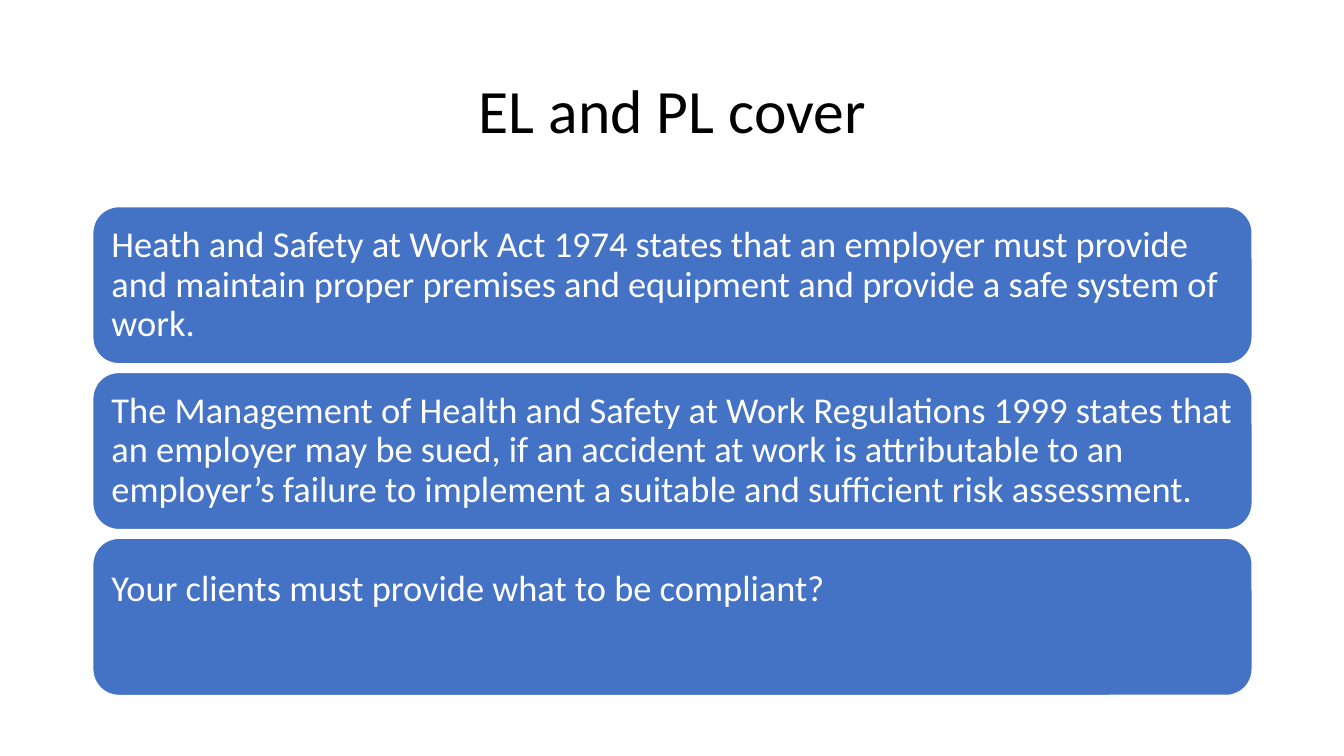
from dataclasses import dataclass

from pptx import Presentation
from pptx.dml.color import RGBColor as RGB
from pptx.enum.shapes import MSO_SHAPE as SHAPE
from pptx.enum.text import MSO_ANCHOR as ANCHOR, PP_ALIGN as ALIGN
from pptx.util import Inches, Pt


@dataclass(frozen=True)
class Theme:
    font: str = "Calibri"
    ink: RGB = RGB(0, 0, 0)
    paper: RGB = RGB(255, 255, 255)
    card: RGB = RGB(0x44, 0x72, 0xC4)
    title_size: int = 44
    card_size: int = 26
    spacing: float = 0.9


def write(tf, text, size, color, align):
    p = tf.paragraphs[0]
    p.alignment = align
    p.line_spacing = theme.spacing
    r = p.add_run()
    r.text = text
    r.font.name = theme.font
    r.font.size = Pt(size)
    r.font.color.rgb = color


theme = Theme()
prs = Presentation()
prs.slide_width, prs.slide_height = Inches(13.33), Inches(7.5)
s = prs.slides.add_slide(prs.slide_layouts[5])

left, width = Inches(0.92), Inches(11.5)
top, height, gap = Inches(2.05), Inches(1.56), Inches(0.085)

title = s.shapes.title
title.left, title.top = left, Inches(0.4)
title.width, title.height = width, Inches(1.45)
title.text_frame.vertical_anchor = ANCHOR.MIDDLE
write(title.text_frame, "EL and PL cover", theme.title_size, theme.ink, ALIGN.CENTER)

cards = [
    ("Heath and Safety at Work Act 1974 states that an employer must provide "
     "and maintain proper premises and equipment and provide a safe system of work.",
     ANCHOR.MIDDLE, 0.05),
    ("The Management of Health and Safety at Work Regulations 1999 states that "
     "an employer may be sued, if an accident at work is attributable to an "
     "employer’s failure to implement a suitable and sufficient risk assessment.",
     ANCHOR.MIDDLE, 0.05),
    ("Your clients must provide what to be compliant?", ANCHOR.TOP, 0.24),
]

for row, (text, anchor, inset) in enumerate(cards):
    sp = s.shapes.add_shape(
        SHAPE.ROUNDED_RECTANGLE, left, top + row * (height + gap), width, height)
    sp.shadow.inherit = False
    sp.fill.solid()
    sp.fill.fore_color.rgb = theme.card
    sp.line.color.rgb = theme.paper
    sp.line.width = Pt(1)
    tf = sp.text_frame
    tf.word_wrap = True
    tf.vertical_anchor = anchor
    tf.margin_left = tf.margin_right = Inches(0.11)
    tf.margin_top = Inches(inset)
    tf.margin_bottom = Inches(0.05)
    write(tf, text, theme.card_size, theme.paper, ALIGN.LEFT)

prs.save("out.pptx")
